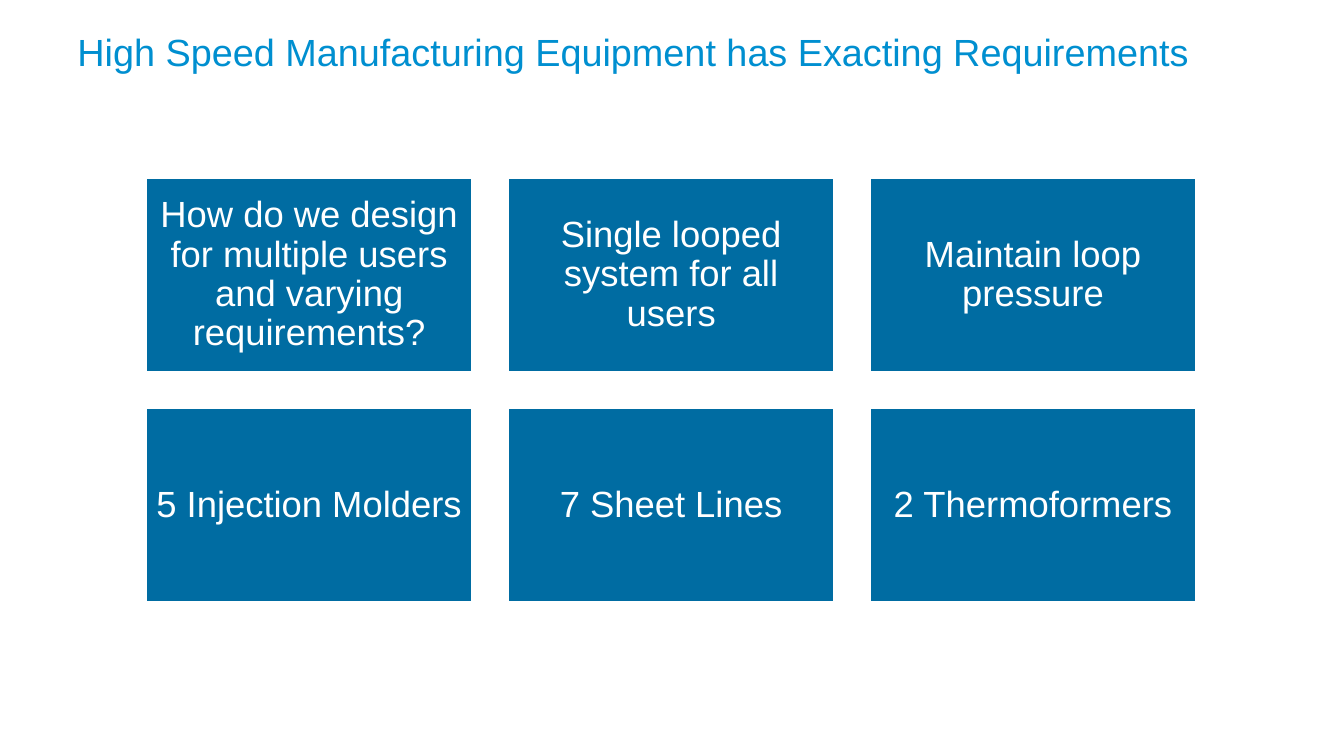
from pptx import Presentation
from pptx.dml.color import RGBColor
from pptx.enum import shapes, text
from pptx.util import Pt

TITLE = "High Speed Manufacturing Equipment has Exacting Requirements"
CARDS = [
    ["How do we design for multiple users and varying requirements?",
     "Single looped system for all users",
     "Maintain loop pressure"],
    ["5 Injection Molders", "7 Sheet Lines", "2 Thermoformers"],
]

SKY = RGBColor(0x00, 0x8F, 0xD0)
BLUE = RGBColor(0x00, 0x6C, 0xA2)
WHITE = RGBColor(0xFF, 0xFF, 0xFF)

LEFT, TOP = 103.5, 126
WIDTH, HEIGHT = 235, 141
GAP = 23.5


def write(shape, words, size, color, align, anchor, inset=(7.2, 3.6), space=None):
    """Fill a shape with one formatted paragraph; inset is (sides, top and bottom)."""
    frame = shape.text_frame
    frame.word_wrap = True
    frame.vertical_anchor = anchor
    frame.margin_left = frame.margin_right = Pt(inset[0])
    frame.margin_top = frame.margin_bottom = Pt(inset[1])
    para = frame.paragraphs[0]
    para.alignment = align
    para.line_spacing = space
    run = para.add_run()
    run.text = words
    run.font.name = "Arial"
    run.font.size = Pt(size)
    run.font.color.rgb = color


def card(slide, words, left, top):
    box = slide.shapes.add_shape(shapes.MSO_SHAPE.RECTANGLE,
                                 Pt(left), Pt(top), Pt(WIDTH), Pt(HEIGHT))
    box.shadow.inherit = False
    box.fill.solid()
    box.fill.fore_color.rgb = BLUE
    box.line.color.rgb = WHITE
    box.line.width = Pt(3.78)
    write(box, words, 26, WHITE, text.PP_ALIGN.CENTER, text.MSO_ANCHOR.MIDDLE,
          inset=(7.5, 7.5), space=0.9)


def main():
    deck = Presentation()
    deck.slide_width, deck.slide_height = Pt(960), Pt(540)
    slide = deck.slides.add_slide(deck.slide_layouts[6])

    title = slide.shapes.add_textbox(Pt(48.25), Pt(12.25), Pt(872), Pt(44.5))
    write(title, TITLE, 27, SKY, text.PP_ALIGN.LEFT, text.MSO_ANCHOR.BOTTOM)

    for row, line in enumerate(CARDS):
        for col, words in enumerate(line):
            card(slide, words, LEFT + col * (WIDTH + GAP), TOP + row * (HEIGHT + GAP))

    deck.save("out.pptx")


if __name__ == "__main__":
    main()
